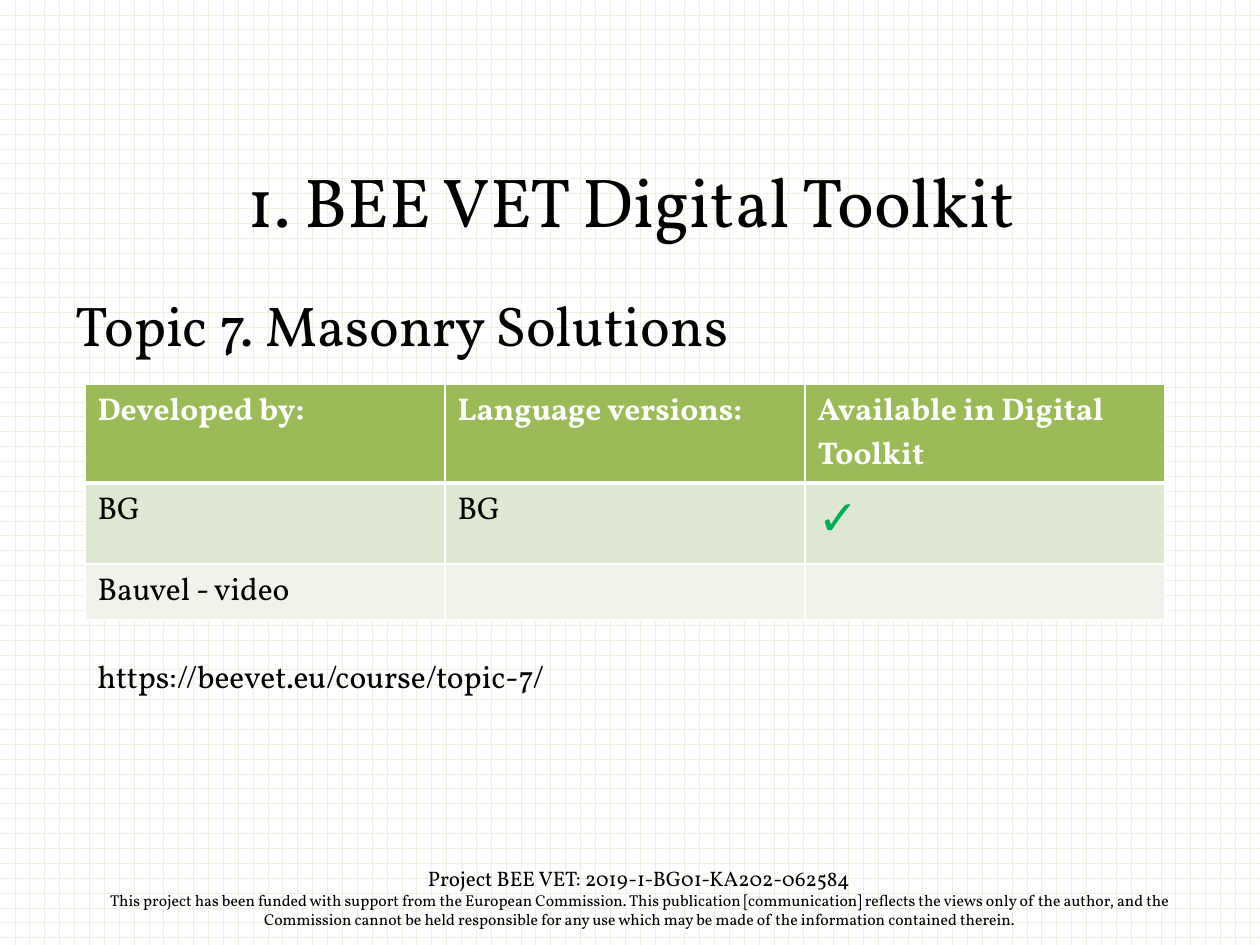
from lxml.etree import SubElement
from pptx import Presentation
from pptx.dml.color import RGBColor
from pptx.enum.dml import MSO_PATTERN
from pptx.enum.text import MSO_ANCHOR, MSO_AUTO_SIZE, PP_ALIGN
from pptx.oxml.ns import qn
from pptx.util import Emu, Pt

PX_PER_INCH = 126
FONT = "Vollkorn"

BLACK = RGBColor(0x00, 0x00, 0x00)
WHITE = RGBColor(0xFF, 0xFF, 0xFF)
GRID_LINE = RGBColor(0xEB, 0xF1, 0xDE)
HEADER_GREEN = RGBColor(0x9B, 0xBB, 0x59)
BAND_DARK = RGBColor(0xDE, 0xE7, 0xD1)
BAND_LIGHT = RGBColor(0xEF, 0xF3, 0xEA)
CHECK_GREEN = RGBColor(0x00, 0xB0, 0x50)

CHECK = "✓"
TOOLKIT_ROWS = [
    ["Developed by:", "Language versions:", "Available in Digital Toolkit"],
    ["BG", "BG", CHECK],
    ["Bauvel - video", "", ""],
]
ROW_FILLS = [HEADER_GREEN, BAND_DARK, BAND_LIGHT]
ROW_HEIGHTS = [99, 81, 56]
COLUMN_WIDTH = 360

FUNDING_LINES = [
    ("Project BEE VET: 2019-1-BG01-KA202-062584", 12),
    ("This project has been funded with support from the European Commission. "
     "This publication [communication] reflects the views only of the author, "
     "and the Commission cannot be held responsible for any use which may be "
     "made of the information contained therein.", 9),
]


def px(length):
    return Emu(round(length * 914400 / PX_PER_INCH))


def style_runs(paragraph, size, color=BLACK, bold=False):
    for run in paragraph.runs:
        run.font.name = FONT
        run.font.size = Pt(size)
        run.font.bold = bold
        run.font.color.rgb = color


def paint_grid_background(slide):
    fill = slide.background.fill
    fill.patterned()
    fill.pattern = MSO_PATTERN.HORIZONTAL_BRICK
    fill.fore_color.rgb = GRID_LINE
    fill.back_color.rgb = WHITE


def add_text(slide, box, lines, align=PP_ALIGN.LEFT, anchor=MSO_ANCHOR.TOP,
             wrap=True, grow=False):
    """Add a text box; lines holds (text, size) pairs, one per paragraph."""
    frame = slide.shapes.add_textbox(*map(px, box)).text_frame
    frame.word_wrap = wrap
    frame.vertical_anchor = anchor
    if grow:
        frame.auto_size = MSO_AUTO_SIZE.SHAPE_TO_FIT_TEXT
    frame.text = "\n".join(text for text, _ in lines)
    for paragraph, (_, size) in zip(frame.paragraphs, lines):
        paragraph.alignment = align
        style_runs(paragraph, size)


def set_borders(cell, top, bottom):
    """Draw white cell borders; the side ones are 1 pt wide."""
    properties = cell._tc.get_or_add_tcPr()
    widths = {"a:lnL": 1, "a:lnR": 1, "a:lnT": top, "a:lnB": bottom}
    for position, (side, width) in enumerate(widths.items()):
        line = SubElement(properties, qn(side), w=str(Pt(width)))
        SubElement(SubElement(line, qn("a:solidFill")), qn("a:srgbClr"), val=str(WHITE))
        properties.insert(position, line)


def fill_cell(cell, text, row):
    header = row == 0
    cell.fill.solid()
    cell.fill.fore_color.rgb = ROW_FILLS[row]
    cell.text = text
    paragraph = cell.text_frame.paragraphs[0]
    if text == CHECK:
        style_runs(paragraph, 28, CHECK_GREEN)
    else:
        style_runs(paragraph, 18, WHITE if header else BLACK, header)
    set_borders(cell, top=3 if row == 1 else 1, bottom=3 if header else 1)


def add_toolkit_table(slide, left, top):
    columns = len(TOOLKIT_ROWS[0])
    table = slide.shapes.add_table(
        len(TOOLKIT_ROWS), columns, px(left), px(top),
        px(COLUMN_WIDTH * columns), px(sum(ROW_HEIGHTS))).table
    for column in table.columns:
        column.width = px(COLUMN_WIDTH)
    for row, texts in enumerate(TOOLKIT_ROWS):
        table.rows[row].height = px(ROW_HEIGHTS[row])
        for column, text in enumerate(texts):
            fill_cell(table.cell(row, column), text, row)


def main():
    presentation = Presentation()
    presentation.slide_width = px(1260)
    presentation.slide_height = px(945)
    slide = presentation.slides.add_slide(presentation.slide_layouts[6])

    paint_grid_background(slide)
    add_text(slide, (64, 859, 1150, 77), FUNDING_LINES, PP_ALIGN.CENTER, grow=True)
    add_text(slide, (64, 155, 1134, 89), [("1. BEE VET Digital Toolkit", 39.6)],
             PP_ALIGN.CENTER, MSO_ANCHOR.MIDDLE)
    add_text(slide, (63, 284, 1134, 561), [("Topic 7. Masonry Solutions", 32)])
    add_toolkit_table(slide, 85, 384)
    add_text(slide, (85, 651, 524, 50), [("https://beevet.eu/course/topic-7/", 18)],
             wrap=False, grow=True)

    presentation.save("out.pptx")


if __name__ == "__main__":
    main()
